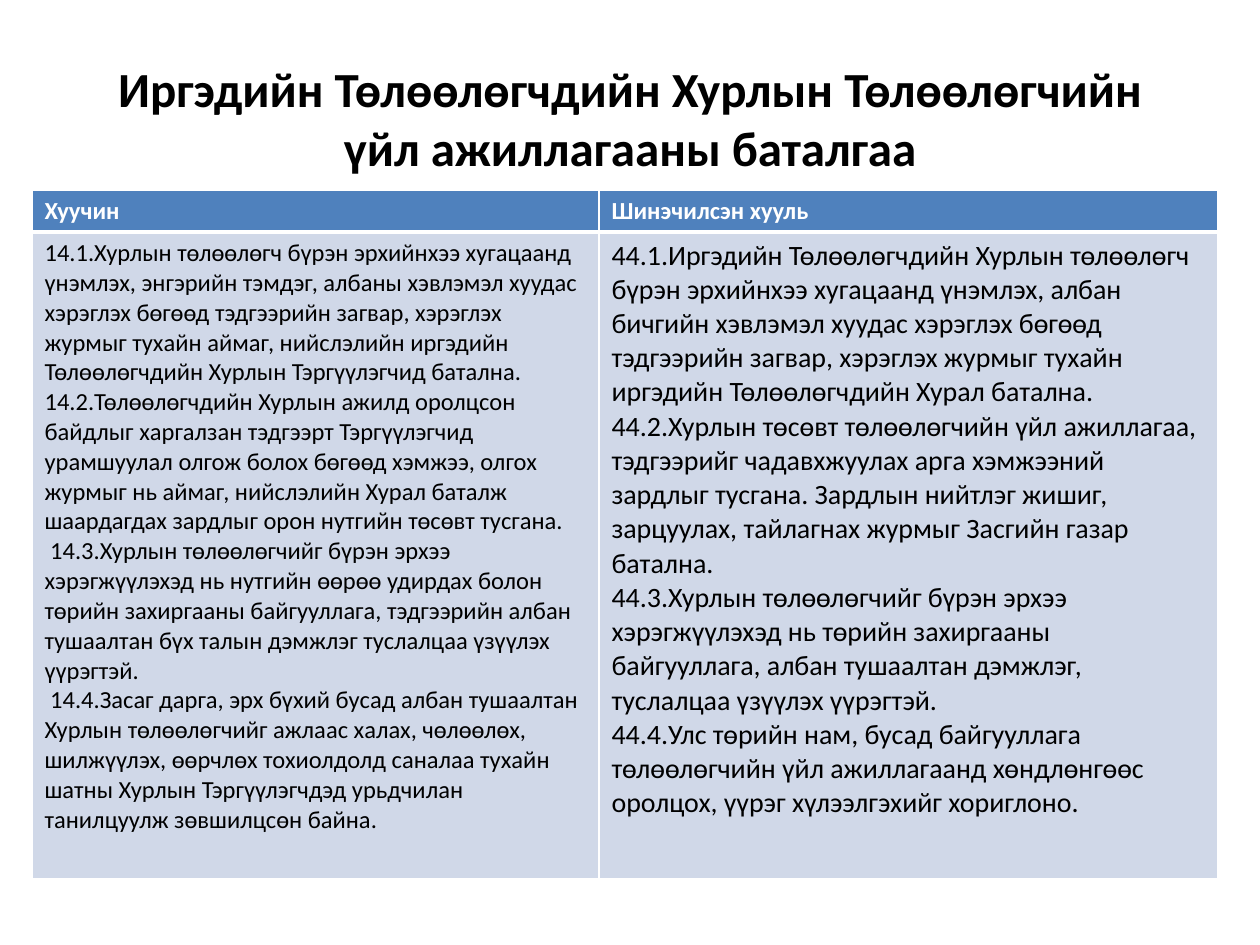
from dataclasses import dataclass

from lxml.etree import SubElement
from pptx import Presentation
from pptx.dml.color import RGBColor
from pptx.enum.text import MSO_ANCHOR, PP_ALIGN
from pptx.oxml.ns import qn
from pptx.util import Emu, Pt

PX_PER_INCH = 126
BLACK = RGBColor(0x00, 0x00, 0x00)
WHITE = RGBColor(0xFF, 0xFF, 0xFF)
BLUE = RGBColor(0x4F, 0x81, 0xBD)
PALE_BLUE = RGBColor(0xD0, 0xD8, 0xE8)

TITLE = "Иргэдийн Төлөөлөгчдийн Хурлын Төлөөлөгчийн үйл ажиллагааны баталгаа"
OLD_LAW = (
    "14.1.Хурлын төлөөлөгч бүрэн эрхийнхээ хугацаанд үнэмлэх, энгэрийн тэмдэг, "
    "албаны хэвлэмэл хуудас хэрэглэх бөгөөд тэдгээрийн загвар, хэрэглэх журмыг "
    "тухайн аймаг, нийслэлийн иргэдийн Төлөөлөгчдийн Хурлын Тэргүүлэгчид батална.",
    "14.2.Төлөөлөгчдийн Хурлын ажилд оролцсон байдлыг харгалзан тэдгээрт "
    "Тэргүүлэгчид урамшуулал олгож болох бөгөөд хэмжээ, олгох журмыг нь аймаг, "
    "нийслэлийн Хурал баталж шаардагдах зардлыг орон нутгийн төсөвт тусгана.",
    " 14.3.Хурлын төлөөлөгчийг бүрэн эрхээ хэрэгжүүлэхэд нь нутгийн өөрөө удирдах "
    "болон төрийн захиргааны байгууллага, тэдгээрийн албан тушаалтан бүх талын "
    "дэмжлэг туслалцаа үзүүлэх үүрэгтэй.",
    " 14.4.Засаг дарга, эрх бүхий бусад албан тушаалтан Хурлын төлөөлөгчийг ажлаас "
    "халах, чөлөөлөх, шилжүүлэх, өөрчлөх тохиолдолд саналаа тухайн шатны Хурлын "
    "Тэргүүлэгчдэд урьдчилан танилцуулж зөвшилцсөн байна.",
)
NEW_LAW = (
    "44.1.Иргэдийн Төлөөлөгчдийн Хурлын төлөөлөгч бүрэн эрхийнхээ хугацаанд "
    "үнэмлэх, албан бичгийн хэвлэмэл хуудас хэрэглэх бөгөөд тэдгээрийн загвар, "
    "хэрэглэх журмыг тухайн иргэдийн Төлөөлөгчдийн Хурал батална.",
    "44.2.Хурлын төсөвт төлөөлөгчийн үйл ажиллагаа, тэдгээрийг чадавхжуулах арга "
    "хэмжээний зардлыг тусгана. Зардлын нийтлэг жишиг, зарцуулах, тайлагнах журмыг "
    "Засгийн газар батална.",
    "44.3.Хурлын төлөөлөгчийг бүрэн эрхээ хэрэгжүүлэхэд нь төрийн захиргааны "
    "байгууллага, албан тушаалтан дэмжлэг, туслалцаа үзүүлэх үүрэгтэй.",
    "44.4.Улс төрийн нам, бусад байгууллага төлөөлөгчийн үйл ажиллагаанд "
    "хөндлөнгөөс оролцох, үүрэг хүлээлгэхийг хориглоно.",
)


@dataclass(frozen=True)
class LawColumn:
    heading: str
    articles: tuple[str, ...]
    width: int
    size: int


COLUMNS = (
    LawColumn("Хуучин", OLD_LAW, 567, 14),
    LawColumn("Шинэчилсэн хууль", NEW_LAW, 619, 16),
)
ROW_HEIGHTS = (41, 647)


def px(n: int) -> Emu:
    return Emu(round(n * 914400 / PX_PER_INCH))


def write(tf, lines: tuple[str, ...], size: int, color: RGBColor,
          bold: bool, align=PP_ALIGN.LEFT) -> None:
    font_format = {"name": "Calibri", "size": Pt(size), "bold": bold}
    for i, line in enumerate(lines):
        p = tf.paragraphs[0] if i == 0 else tf.add_paragraph()
        p.alignment = align
        r = p.add_run()
        r.text = line
        for name, value in font_format.items():
            setattr(r.font, name, value)
        r.font.color.rgb = color


def set_borders(cell, widths: dict[str, int]) -> None:
    tc_pr = cell._tc.get_or_add_tcPr()
    for i, (side, width) in enumerate(widths.items()):
        ln = SubElement(tc_pr, qn(f"a:ln{side}"), w=str(Pt(width)))
        fill = SubElement(ln, qn("a:solidFill"))
        SubElement(fill, qn("a:srgbClr"), val=str(WHITE))
        tc_pr.insert(i, ln)


def fill_cell(cell, lines: tuple[str, ...], size: int, header: bool) -> None:
    cell.fill.solid()
    cell.fill.fore_color.rgb = BLUE if header else PALE_BLUE
    write(cell.text_frame, lines, size, WHITE if header else BLACK, header)
    set_borders(cell, {"L": 1, "R": 1, "T": 1 if header else 3, "B": 3 if header else 1})


def add_title(s) -> None:
    sp = s.shapes.add_textbox(px(63), px(38), px(1134), px(158))
    tf = sp.text_frame
    for name, value in {"word_wrap": True, "vertical_anchor": MSO_ANCHOR.MIDDLE}.items():
        setattr(tf, name, value)
    write(tf, (TITLE,), 28, BLACK, True, PP_ALIGN.CENTER)


def add_comparison(s) -> None:
    width = sum(c.width for c in COLUMNS)
    tbl = s.shapes.add_table(len(ROW_HEIGHTS), len(COLUMNS), px(32), px(190),
                             px(width), px(sum(ROW_HEIGHTS))).table
    for row, height in zip(tbl.rows, ROW_HEIGHTS):
        row.height = px(height)
    for i, column in enumerate(COLUMNS):
        tbl.columns[i].width = px(column.width)
        fill_cell(tbl.cell(0, i), (column.heading,), 14, True)
        fill_cell(tbl.cell(1, i), column.articles, column.size, False)


def main() -> None:
    prs = Presentation()
    prs.slide_width, prs.slide_height = px(1260), px(945)
    s = prs.slides.add_slide(prs.slide_layouts[6])
    add_title(s)
    add_comparison(s)
    prs.save("out.pptx")


if __name__ == "__main__":
    main()
